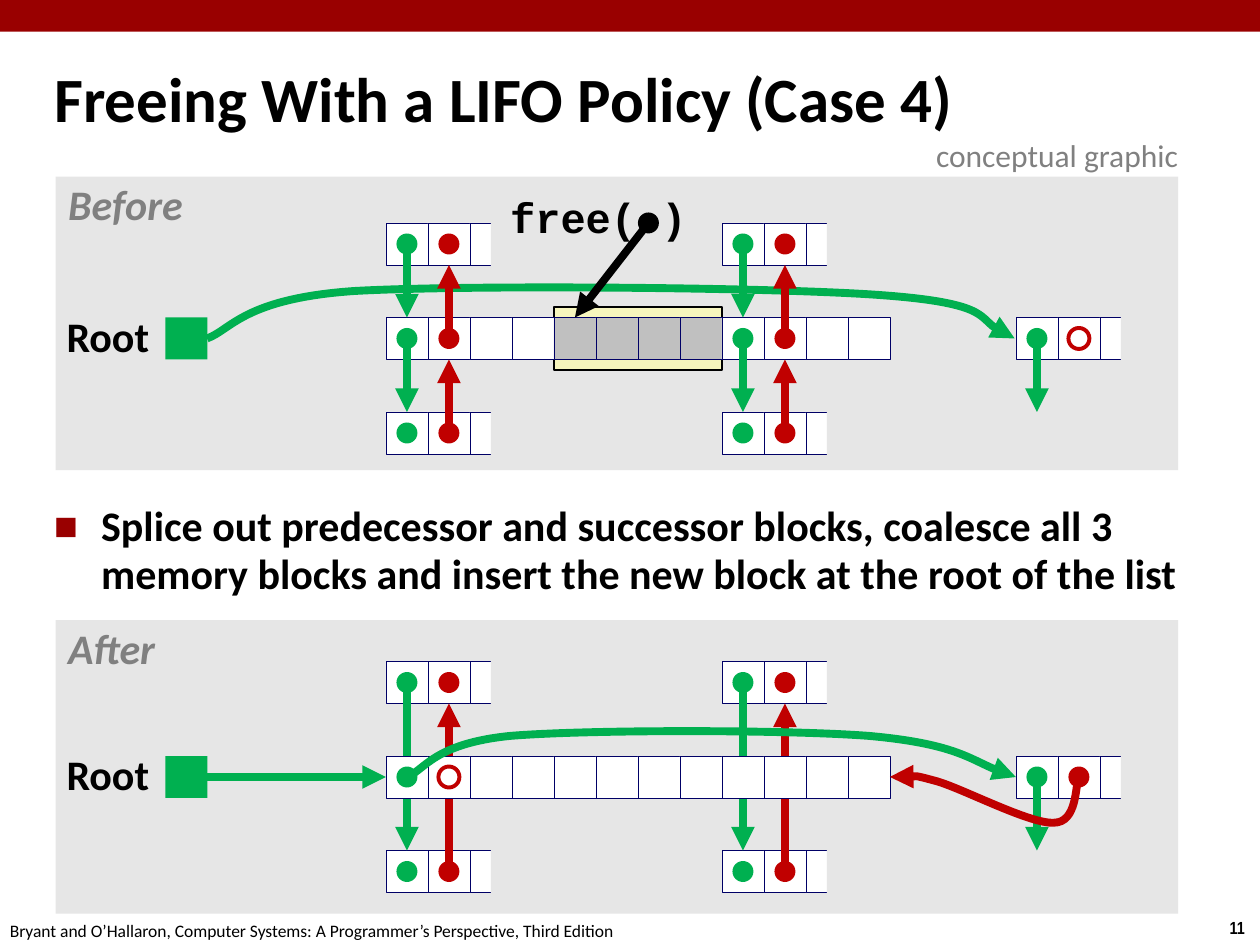
from lxml.etree import SubElement as Sub
from pptx import Presentation
from pptx.dml.color import RGBColor
from pptx.enum.shapes import MSO_CONNECTOR as Link, MSO_SHAPE as Kind
from pptx.enum.text import MSO_ANCHOR as Anchor, PP_ALIGN as Align
from pptx.oxml.ns import qn
from pptx.util import Cm, Pt

GREEN, RED, BLACK, WHITE = "00B050", "C00000", "000000", "FFFFFF"
GRAY, PALE, NAVY, MAROON = "808080", "E6E6E6", "000066", "990000"
UNIT = 2.54 / 3
STEP = 2.25
BLOCKS = (0, 8)


def tint(code):
    return RGBColor.from_string(code)


def draw(pen, x, y, w, h, fill=None, line=None, width=0.25, kind=Kind.RECTANGLE):
    shape = pen.add_shape(kind, Cm(x), Cm(y), Cm(w), Cm(h))
    shape.shadow.inherit = False
    if fill:
        shape.fill.solid()
        shape.fill.fore_color.rgb = tint(fill)
    else:
        shape.fill.background()
    if line:
        shape.line.color.rgb = tint(line)
        shape.line.width = Pt(width)
    else:
        shape.line.fill.background()
    return shape


def style(frame, size, color=BLACK, bold=True, italic=False, font="Calibri"):
    for run in frame.paragraphs[0].runs:
        run.font.name, run.font.size = font, Pt(size)
        run.font.bold, run.font.italic = bold, italic
        run.font.color.rgb = tint(color)


def write(pen, x, y, w, h, text, size, wrap=False, **look):
    frame = pen.add_textbox(Cm(x), Cm(y), Cm(w), Cm(h)).text_frame
    frame.word_wrap = wrap
    frame.text = text
    style(frame, size, **look)
    return frame


def label(pen, x, y, w, text, **look):
    frame = write(pen, x, y, w, 1.19, text, 24, **look)
    frame.margin_left = frame.margin_right = Cm(0.13)
    frame.paragraphs[0].alignment = Align.CENTER
    frame.paragraphs[0].line_spacing = 0.9


def point(shape, color):
    shape.line.color.rgb = tint(color)
    shape.line.width = Pt(4.5)
    edge = shape._element.spPr.find(qn("a:ln"))
    Sub(edge, qn("a:tailEnd"), type="triangle")


def arrow(pen, start, end, color, goal=None, side=0):
    line = pen.add_connector(Link.STRAIGHT, *(Cm(v) for v in (*start, *end)))
    if goal is not None:
        line.end_connect(goal, side)
    point(line, color)
    Sub(line._element.spPr, qn("a:effectLst"))


def curve(pen, spot, knots, color):
    dots = [tuple(Cm(v) for v in spot(*knot)) for knot in knots]
    form = pen.build_freeform(*dots[0])
    form.add_line_segments(dots[1:], close=False)
    shape = form.convert_to_shape()
    shape.shadow.inherit = False
    shape.fill.background()
    track = shape._element.find(".//" + qn("a:path"))
    legs = track.findall(qn("a:lnTo"))
    for i in range(0, len(legs), 3):
        bend = Sub(track, qn("a:cubicBezTo"))
        for leg in legs[i:i + 3]:
            bend.append(leg[0])
            track.remove(leg)
    point(shape, color)


def dot(pen, spot, col, row, fill=None, line=None):
    x, y = spot(col + 0.25, row + 0.25)
    draw(pen, x, y, UNIT / 2, UNIT / 2, fill, line, 2.25, Kind.OVAL)


def cells(pen, spot, col, row, count, dark=()):
    return [draw(pen, *spot(col + i, row), UNIT, UNIT, "C0C0C0" if i in dark else WHITE, NAVY)
            for i in range(count)]


def stub(pen, spot, col, row):
    made = cells(pen, spot, col, row, 3)
    draw(pen, *spot(col + 2.5, row - 0.25), UNIT, 1.5 * UNIT, PALE)
    return made


def panel(pen, x, y, w, h, name, width, drop):
    def spot(col, row):
        return x + 6.66 + col * UNIT, y + drop + row * UNIT

    draw(pen, x, y, w, h, PALE)
    label(pen, x + 0.1, y + 0.03, width, name, color=GRAY, italic=True)
    label(pen, *spot(-7.76, -0.18), 1.93, "Root")
    draw(pen, *spot(-5.25, 0), UNIT, UNIT, GREEN)
    return spot


def ends(pen, spot):
    for col in BLOCKS:
        for row in (-STEP, STEP):
            dot(pen, spot, col, row, GREEN)
            dot(pen, spot, col + 1, row, RED)


def last(pen, spot):
    stub(pen, spot, 15, 0)
    dot(pen, spot, 15, 0, GREEN)
    arrow(pen, spot(15.5, 0.5), spot(15.5, STEP), GREEN)


def before(pen, x, y, w, h):
    spot = panel(pen, x, y, w, h, "Before", 2.62, 2.84)
    draw(pen, *spot(4, -0.25), 4 * UNIT, 1.5 * UNIT, "F6F5BD", BLACK, 0.75)
    curve(pen, spot, [(-4.26, 0.5), (-3.69, 0.3), (-3.39, -0.45), (-0.75, -0.63),
                      (1.92, -0.78), (9.03, -0.72), (11.67, -0.54),
                      (14.28, -0.36), (14.28, 0.27), (14.97, 0.5)], GREEN)
    row = cells(pen, spot, 0, 0, 12, range(4, 8))
    for col in BLOCKS:
        top, low = (stub(pen, spot, col, r) for r in (-STEP, STEP))
        for goal, r in ((row[col], 0), (low[0], STEP)):
            arrow(pen, spot(col + 0.5, r - STEP + 0.5), spot(col + 0.5, r), GREEN, goal, 0)
        for goal, r in ((row[col + 1], 0), (top[1], -STEP)):
            arrow(pen, spot(col + 1.5, r + STEP + 0.5), spot(col + 1.5, r + 1), RED, goal, 2)
        dot(pen, spot, col, 0, GREEN)
        dot(pen, spot, col + 1, 0, RED)
    ends(pen, spot)
    last(pen, spot)
    dot(pen, spot, 16, 0, line=RED)
    label(pen, *spot(2.79, -3), 3.84, "free( )", font="Courier New")
    dot(pen, spot, 5.75, -2.75, BLACK)
    arrow(pen, spot(6.25, -STEP), spot(4.5, 0), BLACK, row[4], 0)


def after(pen, x, y, w, h):
    spot = panel(pen, x, y, w, h, "After", 2.06, 2.74)
    for col in BLOCKS:
        top, low = (stub(pen, spot, col, r) for r in (-STEP, STEP))
        arrow(pen, spot(col + 0.5, 0.5 - STEP), spot(col + 0.5, STEP), GREEN, low[0], 0)
        arrow(pen, spot(col + 1.5, STEP + 0.5), spot(col + 1.5, 1 - STEP), RED, top[1], 2)
    row = cells(pen, spot, 0, 0, 12)
    ends(pen, spot)
    last(pen, spot)
    dot(pen, spot, 0, 0, GREEN)
    dot(pen, spot, 1, 0, line=RED)
    dot(pen, spot, 16, 0, RED)
    arrow(pen, spot(-4.5, 0.5), spot(0, 0.5), GREEN, row[0], 1)
    curve(pen, spot, [(0.5, 0.5), (0.93, 0.33), (1.14, -0.3), (2.97, -0.48),
                      (4.8, -0.63), (9.48, -0.63), (11.49, -0.48),
                      (13.5, -0.3), (14.28, 0.3), (15, 0.5)], GREEN)
    curve(pen, spot, [(16.5, 0.5), (16.41, 0.69), (16.47, 1.59), (15.9, 1.59),
                      (15.33, 1.62), (13.74, 0.78), (13.11, 0.6),
                      (12.45, 0.42), (12.24, 0.5), (12, 0.5)], RED)


def head(slide, x, y, w, h):
    title = slide.shapes.title
    title.left, title.top, title.width, title.height = (Cm(v) for v in (x, y, w, h))
    frame = title.text_frame
    frame.text = "Freeing With a LIFO Policy (Case 4)"
    frame.vertical_anchor = Anchor.MIDDLE
    frame.paragraphs[0].alignment = Align.LEFT
    frame.paragraphs[0].line_spacing = 0.87
    style(frame, 36)


def point_out(pen, x, y, w, h):
    text = ("Splice out predecessor and successor blocks, coalesce all 3 memory blocks "
            "and insert the new block at the root of the list")
    para = write(pen, x, y, w, h, text, 24, wrap=True).paragraphs[0]
    para.line_spacing = 0.95
    para.space_before = Pt(4.8)
    props = para._p.get_or_add_pPr()
    props.set("marL", str(Cm(0.95)))
    props.set("indent", str(Cm(-0.95)))
    Sub(Sub(props, qn("a:buClr")), qn("a:srgbClr"), val=MAROON)
    Sub(props, qn("a:buSzPct"), val="60000")
    Sub(props, qn("a:buFont"), typeface="Calibri")
    Sub(props, qn("a:buChar"), char="■")


def foot(pen, x, y, w, h):
    write(pen, x, y, 12.9, h,
          "Bryant and O’Hallaron, Computer Systems: A Programmer’s Perspective, Third Edition",
          10, bold=False)
    write(pen, x + w - 0.86, y - 0.05, 0.86, h, "11", 10, font="Arial Narrow")


def main():
    deck = Presentation()
    deck.slide_width, deck.slide_height = Cm(25.4), Cm(19.05)
    slide = deck.slides.add_slide(deck.slide_layouts[5])
    pen = slide.shapes
    draw(pen, 0, 0, 25.4, 0.64, MAROON)
    head(slide, 0.84, 0.99, 24.2, 2.18)
    before(pen, 1.12, 3.56, 22.63, 5.92)
    point_out(pen, 0.84, 10.03, 23.55, 3.15)
    after(pen, 1.12, 12.5, 22.63, 5.92)
    write(pen, 18.62, 2.62, 5.51, 1.02, "conceptual graphic", 18, color=GRAY, bold=False)
    foot(pen, -0.05, 18.42, 25.45, 0.69)
    deck.save("out.pptx")


if __name__ == "__main__":
    main()
